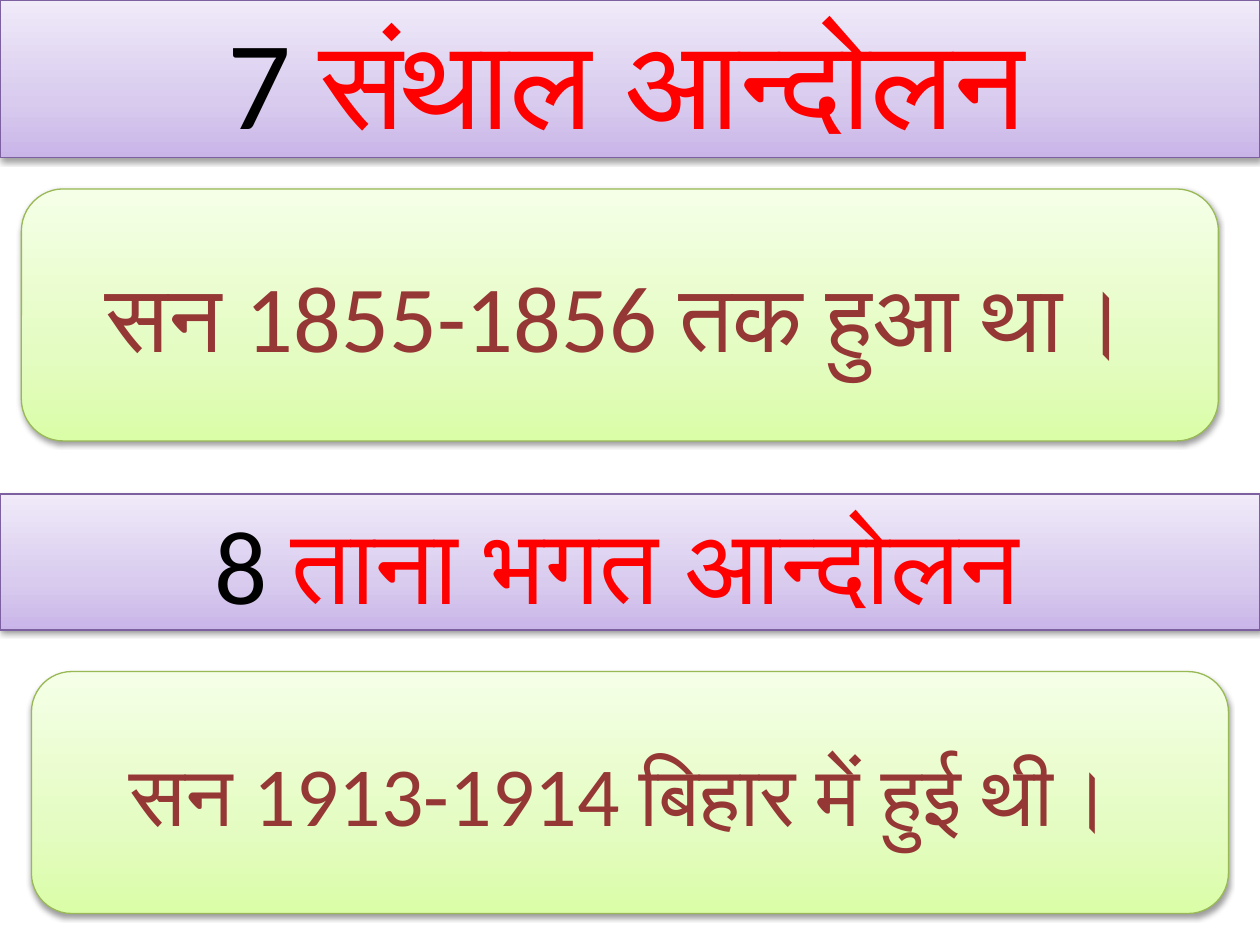
"""Build a slide on two movements, each a heading band above a date panel."""
import copy

import lxml.etree
import pptx
import pptx.dml.color
import pptx.enum.shapes
import pptx.enum.text
import pptx.oxml.ns
import pptx.util
from pptx.util import Inches

COLORS = {
    "number": "000000", "name": "FF0000", "date": "953735", "shadow": "000000",
    "band_line": "7D60A0", "panel_line": "98B955",
}
GRADIENTS = {
    "band": [(0, "C9B5E8"), (0.35, "D8CBEE"), (1, "F0EAF9")],
    "panel": [(0, "DAFDA7"), (0.35, "E4FCC2"), (1, "F5FFE7")],
}
SHAPES = {
    "band": pptx.enum.shapes.MSO_SHAPE.RECTANGLE,
    "panel": pptx.enum.shapes.MSO_SHAPE.ROUNDED_RECTANGLE,
}
BLOCKS = [
    ("band", (0, 0, 10, 1.25),
     [("7 ", 72, "number"), ("संथाल आन्दोलन", 72, "name"), (" ", 18, "name")]),
    ("panel", (0.17, 1.5, 9.5, 2),
     [("सन 1855-1856 तक हुआ था।", 54, "date"), (" ", 18, "date")]),
    ("band", (0, 3.92, 10, 1.08),
     [("8 ", 60, "number"), ("ताना भगत आन्दोलन ", 60, "name")]),
    ("panel", (0.25, 5.33, 9.5, 1.92),
     [("सन 1913-1914 बिहार में हुई थी। ", 48, "date")]),
]


def rgb(name):
    return pptx.dml.color.RGBColor.from_string(COLORS[name])


def add_shadow(shape):
    qn = pptx.oxml.ns.qn
    shape.shadow.inherit = False
    effects = shape.element.spPr.find(qn("a:effectLst"))
    shadow = lxml.etree.SubElement(
        effects, qn("a:outerShdw"), blurRad="40000", dist="20000",
        dir="5400000", rotWithShape="0")
    color = lxml.etree.SubElement(shadow, qn("a:srgbClr"), val=COLORS["shadow"])
    lxml.etree.SubElement(color, qn("a:alpha"), val="38000")


deck = pptx.Presentation()
deck.slide_width, deck.slide_height = Inches(10), Inches(7.5)
page = deck.slides.add_slide(deck.slide_layouts[6])

for kind, place, runs in BLOCKS:
    box = page.shapes.add_shape(SHAPES[kind], *[Inches(value) for value in place])
    box.fill.gradient()
    box.fill.gradient_angle = 90
    stop_list = box.element.spPr.find(".//" + pptx.oxml.ns.qn("a:gsLst"))
    stop_list.insert(1, copy.deepcopy(stop_list[0]))
    for stop, (position, color) in zip(box.fill.gradient_stops, GRADIENTS[kind]):
        stop.position = position
        stop.color.rgb = pptx.dml.color.RGBColor.from_string(color)
    box.line.color.rgb = rgb(kind + "_line")
    box.line.width = pptx.util.Pt(0.75)
    add_shadow(box)

    box.text_frame.word_wrap = True
    box.text_frame.vertical_anchor = pptx.enum.text.MSO_ANCHOR.MIDDLE
    para = box.text_frame.paragraphs[0]
    para.alignment = pptx.enum.text.PP_ALIGN.CENTER
    for text, size, color in runs:
        span = para.add_run()
        span.text = text
        span.font.name = "Calibri"
        span.font.size = pptx.util.Pt(size)
        span.font.color.rgb = rgb(color)

deck.save("out.pptx")
